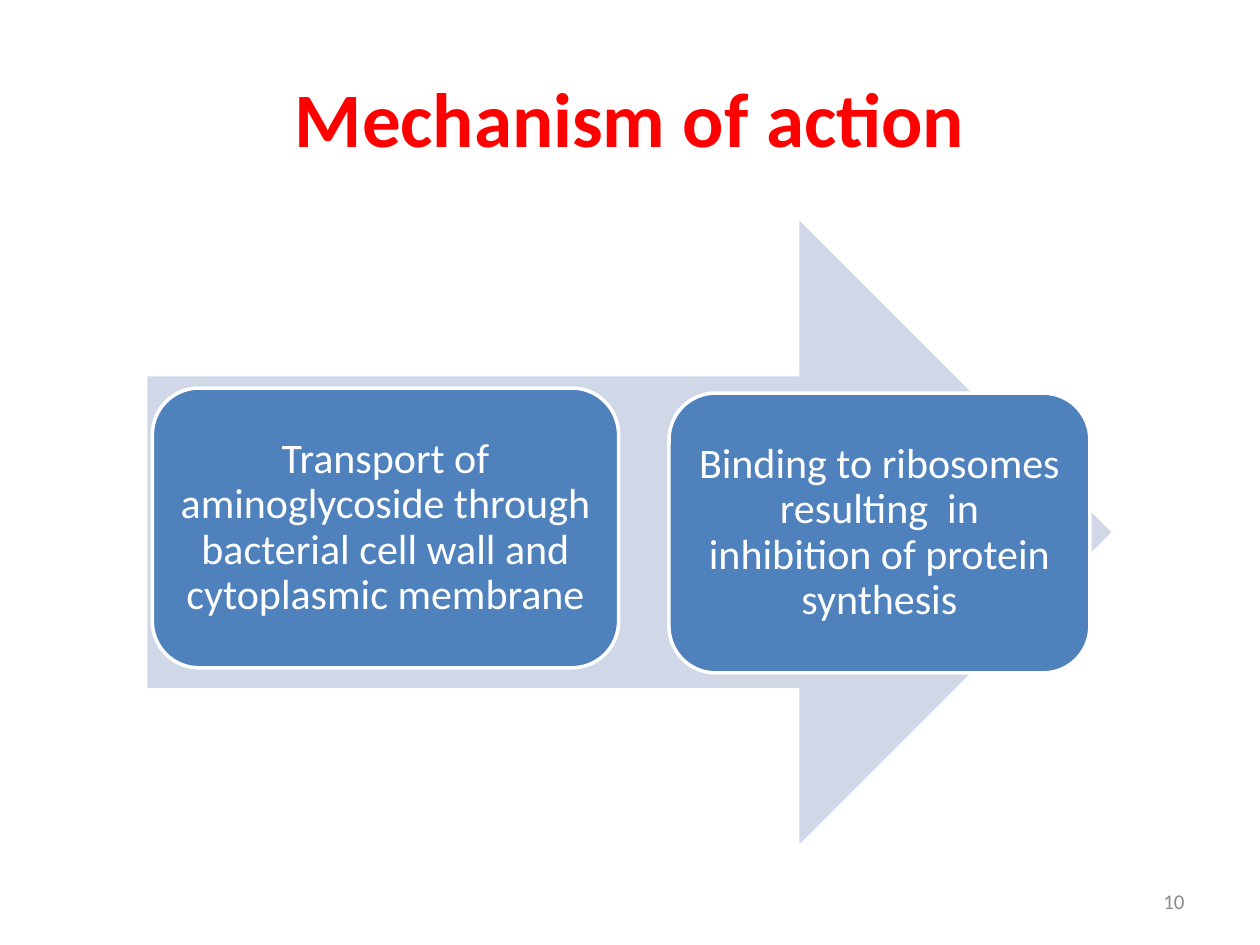
from pptx import Presentation
from pptx import util as u
from pptx.dml.color import RGBColor
from pptx.enum import shapes, text

PX = 9144  # 100 px to the inch


def place(*lengths):
    return [u.Emu(length * PX) for length in lengths]


def write(shape, words, align, inset, font_format, color):
    """Set one vertically centred paragraph with the given font format."""
    frame = shape.text_frame
    frame.word_wrap = True
    frame.vertical_anchor = text.MSO_ANCHOR.MIDDLE
    for side in ("left", "top", "right", "bottom"):
        setattr(frame, f"margin_{side}", u.Emu(inset * PX))
    paragraph = frame.paragraphs[0]
    paragraph.alignment = align
    run = paragraph.add_run()
    run.text = words
    for name, value in font_format.items():
        setattr(run.font, name, value)
    run.font.color.rgb = RGBColor.from_string(color)
    return paragraph


presentation = Presentation()
presentation.slide_width, presentation.slide_height = place(1000, 750)
slide = presentation.slides.add_slide(presentation.slide_layouts[5])

title = slide.shapes.title
title.left, title.top, title.width, title.height = place(50, 30, 900, 125)
write(title, "Mechanism of action", text.PP_ALIGN.CENTER, 5,
      {"name": "Calibri", "size": u.Pt(44), "bold": True}, "FF0000")

arrow = slide.shapes.add_shape(shapes.MSO_SHAPE.RIGHT_ARROW, *place(117, 175, 765, 495))
arrow.shadow.inherit = False
arrow.fill.solid()
arrow.fill.fore_color.rgb = RGBColor.from_string("D0D8E8")
arrow.line.fill.background()

steps = [
    ((121, 308, 370, 222),
     "Transport of aminoglycoside through bacterial cell wall and cytoplasmic membrane"),
    ((531, 312, 334, 222),
     "Binding to ribosomes resulting  in inhibition of protein synthesis"),
]
for box, words in steps:
    step = slide.shapes.add_shape(shapes.MSO_SHAPE.ROUNDED_RECTANGLE, *place(*box))
    step.shadow.inherit = False
    step.fill.solid()
    step.fill.fore_color.rgb = RGBColor.from_string("4F81BD")
    step.line.color.rgb = RGBColor.from_string("FFFFFF")
    step.line.width = u.Pt(2)
    paragraph = write(step, words, text.PP_ALIGN.CENTER, 10,
                      {"name": "Calibri", "size": u.Pt(24)}, "FFFFFF")
    paragraph.line_spacing = 0.9

page_number = slide.shapes.add_textbox(*place(717, 695, 233, 40))
write(page_number, "10", text.PP_ALIGN.RIGHT, 10,
      {"name": "Calibri", "size": u.Pt(12)}, "8C8C8C")

presentation.save("out.pptx")
